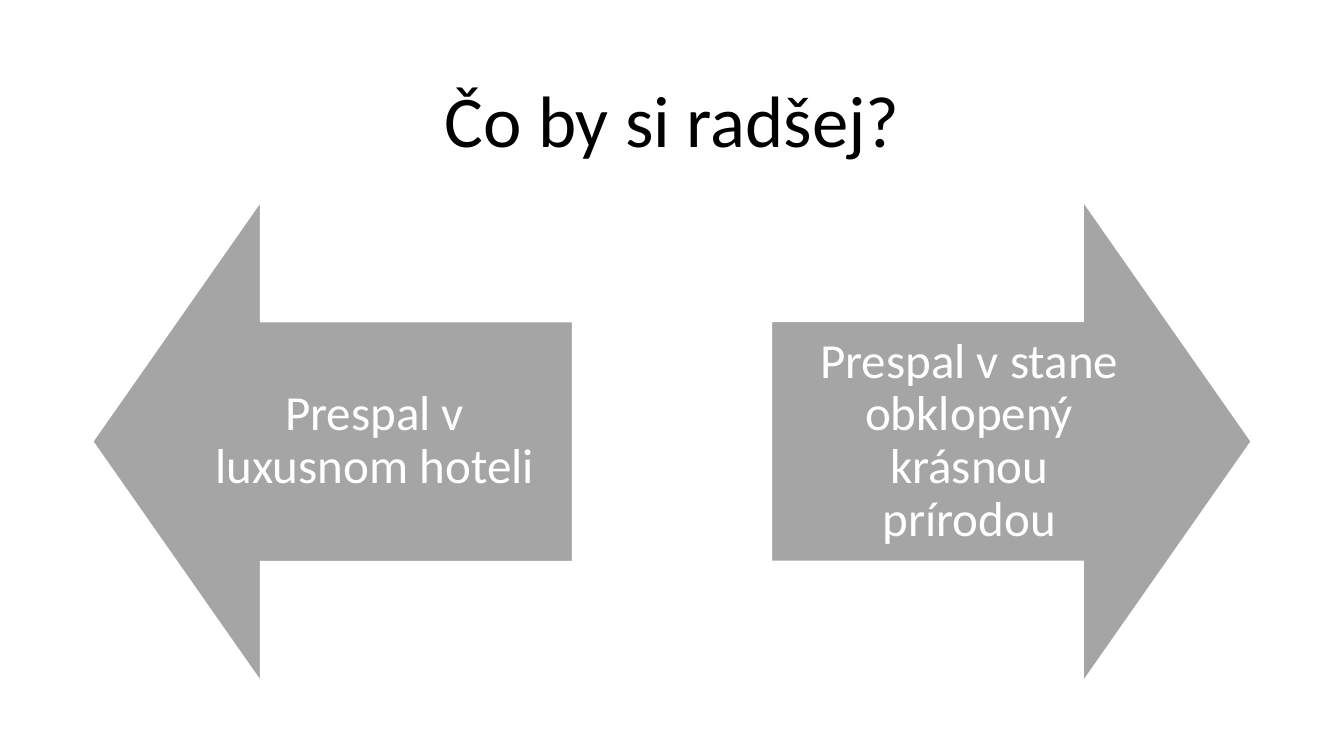
from pptx import Presentation
from pptx.dml.color import RGBColor
from pptx.enum.shapes import MSO_SHAPE as Shape
from pptx.enum.text import MSO_ANCHOR as Anchor, MSO_AUTO_SIZE as AutoSize, PP_ALIGN as Align
from pptx.util import Inches, Pt

QUESTION = "Čo by si radšej?"
CHOICES = [
    {"answer": "Prespal v luxusnom hoteli", "rotation": 270},
    {"answer": "Prespal v stane obklopený krásnou prírodou", "rotation": 90},
]

SLIDE_WIDTH, SLIDE_HEIGHT = 13.33, 7.5
MARGIN = 0.92
TITLE_TOP, TITLE_HEIGHT = 0.61, 1.24
ARROW_TOP, ARROW_SIZE = 2, 4.76
SHAFT_RATIO, HEAD_RATIO = 0.5, 0.35
ANSWER_INSET = 0.27


def color(hex_value):
    return RGBColor.from_string(hex_value)


def set_all(target, values):
    for key, value in values.items():
        setattr(target, key, value)


def place(part, left, top, width, height):
    box = {"left": left, "top": top, "width": width, "height": height}
    set_all(part, {side: Inches(length) for side, length in box.items()})


def write(frame, text, size, hex_value, inset):
    set_all(frame, {"text": text, "word_wrap": True, "auto_size": AutoSize.NONE,
                    "vertical_anchor": Anchor.MIDDLE})
    set_all(frame, {f"margin_{side}": Inches(inset)
                    for side in ("left", "top", "right", "bottom")})
    paragraph = frame.paragraphs[0]
    set_all(paragraph, {"alignment": Align.CENTER, "line_spacing": 0.9})
    font = paragraph.runs[0].font
    set_all(font, {"name": "Calibri", "size": Pt(size)})
    font.color.rgb = color(hex_value)


def add_choice(slide, left, answer, rotation):
    arrow = slide.shapes.add_shape(Shape.UP_ARROW, 0, 0, 0, 0)
    place(arrow, left, ARROW_TOP, ARROW_SIZE, ARROW_SIZE)
    arrow.rotation = rotation
    arrow.adjustments[0] = SHAFT_RATIO
    arrow.adjustments[1] = HEAD_RATIO
    arrow.shadow.inherit = False
    arrow.fill.solid()
    arrow.fill.fore_color.rgb = color("A5A5A5")
    arrow.line.color.rgb = color("FFFFFF")
    arrow.line.width = Pt(1)

    shaft = ARROW_SIZE * SHAFT_RATIO
    half_head = ARROW_SIZE * HEAD_RATIO / 2
    answer_left = left + half_head if rotation == 270 else left
    answer_box = slide.shapes.add_textbox(0, 0, 0, 0)
    place(answer_box, answer_left, ARROW_TOP + (ARROW_SIZE - shaft) / 2,
          ARROW_SIZE - half_head, shaft)
    write(answer_box.text_frame, answer, 35, "FFFFFF", ANSWER_INSET)


def main():
    deck = Presentation()
    set_all(deck, {"slide_width": Inches(SLIDE_WIDTH), "slide_height": Inches(SLIDE_HEIGHT)})
    slide = deck.slides.add_slide(deck.slide_layouts[5])

    question = slide.shapes.title
    place(question, MARGIN, TITLE_TOP, SLIDE_WIDTH - 2 * MARGIN, TITLE_HEIGHT)
    write(question.text_frame, QUESTION, 52, "000000", 0.1)

    step = SLIDE_WIDTH - 2 * MARGIN - ARROW_SIZE
    for index, choice in enumerate(CHOICES):
        add_choice(slide, MARGIN + index * step, **choice)

    deck.save("out.pptx")


if __name__ == "__main__":
    main()
